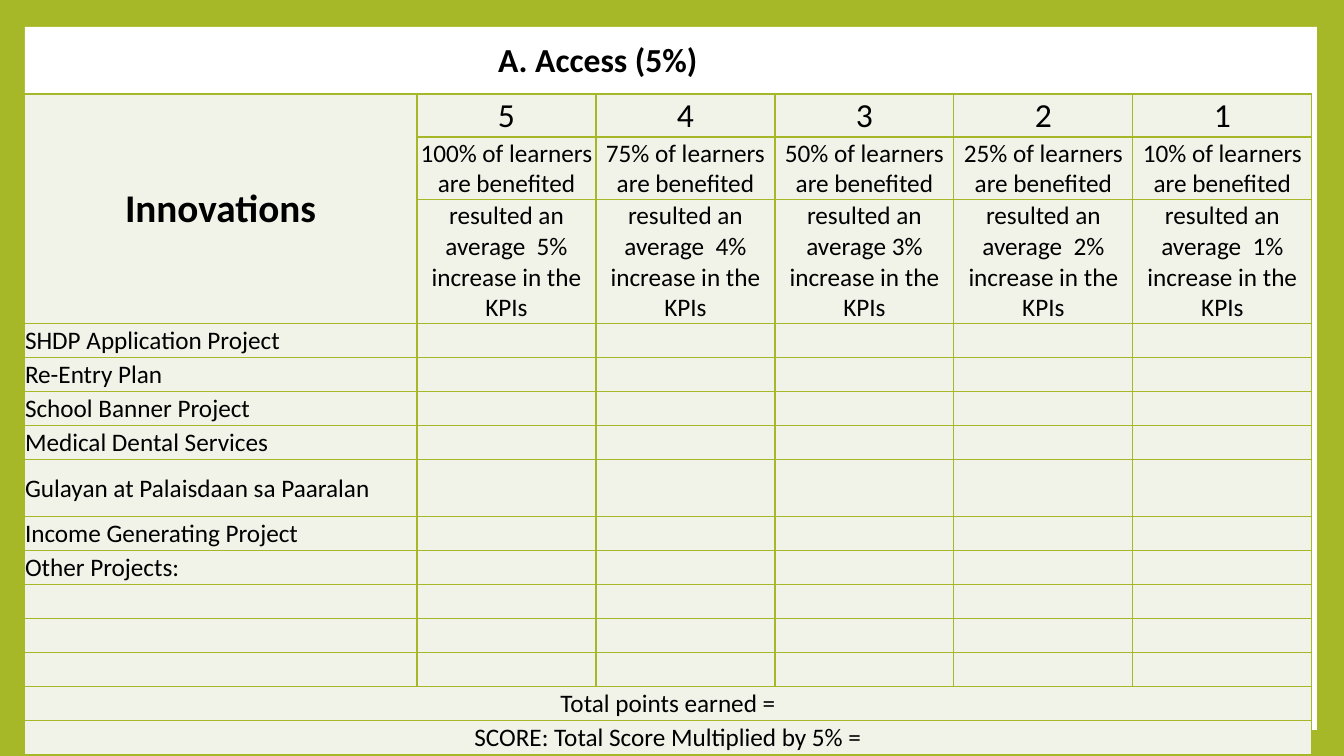
from dataclasses import dataclass

import lxml.etree
import pptx
import pptx.dml.color
import pptx.enum.shapes
import pptx.enum.text
import pptx.oxml.ns
import pptx.util

ALIGN = pptx.enum.text.PP_ALIGN
ANCHOR = pptx.enum.text.MSO_ANCHOR
COLORS = {"green": "A6B727", "white": "FFFFFF", "cell": "F1F3E8", "text": "000000"}
FONT = "Calibri"
EMU_PER_PX = 914400 / 100.8

COLUMN_WIDTHS = [393] + [179] * 5
PROJECTS = [
    "SHDP Application Project",
    "Re-Entry Plan",
    "School Banner Project",
    "Medical Dental Services",
    "Gulayan at Palaisdaan sa Paaralan",
    "Income Generating Project",
    "Other Projects:",
    "",
    "",
    "",
]
TALL_PROJECT = "Gulayan at Palaisdaan sa Paaralan"


@dataclass
class Row:
    height: int
    texts: list[str]
    size: int = 18
    align: ALIGN = ALIGN.CENTER
    full_width: bool = False


ROWS = [
    Row(43, ["Innovations", "5", "4", "3", "2", "1"], size=24),
    Row(62, [""] + [f"{share}% of learners are benefited" for share in (100, 75, 50, 25, 10)]),
    Row(124, [""] + [f"resulted an average{gain}% increase in the KPIs"
                     for gain in ("  5", "  4", " 3", "  2", "  1")]),
    *(Row(57 if project == TALL_PROJECT else 34, [project], align=ALIGN.JUSTIFY)
      for project in PROJECTS),
    Row(34, ["Total points earned ="], full_width=True),
    Row(34, ["SCORE: Total Score Multiplied by 5% ="], full_width=True),
]


def px(length: int) -> pptx.util.Emu:
    return pptx.util.Emu(round(length * EMU_PER_PX))


def set_fill(fill, color: str) -> None:
    fill.solid()
    fill.fore_color.rgb = pptx.dml.color.RGBColor.from_string(COLORS[color])


def style_paragraph(para, size: int, align: ALIGN, bold: bool = False) -> None:
    para.alignment = align
    para.font.name = FONT
    para.font.size = pptx.util.Pt(size)
    para.font.bold = bold
    para.font.color.rgb = pptx.dml.color.RGBColor.from_string(COLORS["text"])


def add_borders(frame) -> None:
    """Draw a one-point green line on every side of every cell."""
    qn = pptx.oxml.ns.qn
    for tc in frame.element.iter(qn("a:tc")):
        properties = tc.get_or_add_tcPr()
        for side in ("lnL", "lnR", "lnT", "lnB"):
            line = lxml.etree.SubElement(properties, qn(f"a:{side}"), w=str(pptx.util.Pt(1)))
            fill = lxml.etree.SubElement(line, qn("a:solidFill"))
            lxml.etree.SubElement(fill, qn("a:srgbClr"), val=COLORS["green"])


def add_title(page) -> None:
    title = page.shapes.title
    title.left, title.top, title.width, title.height = map(px, (488, 40, 398, 39))
    title.text_frame.text = "A. Access (5%)"
    title.text_frame.vertical_anchor = ANCHOR.MIDDLE
    title.text_frame.auto_size = pptx.enum.text.MSO_AUTO_SIZE.NONE
    style_paragraph(title.text_frame.paragraphs[0], 24, ALIGN.LEFT, bold=True)


def add_panel(page) -> None:
    """Lay the white panel behind the title."""
    panel = page.shapes.add_shape(
        pptx.enum.shapes.MSO_SHAPE.RECTANGLE, px(25), px(27), px(1292), px(703))
    panel.shadow.inherit = False
    set_fill(panel.fill, "white")
    panel.line.fill.background()
    page.shapes.title.element.addprevious(panel.element)


def add_score_table(page) -> None:
    frame = page.shapes.add_table(
        len(ROWS), len(COLUMN_WIDTHS), px(24), px(94),
        px(sum(COLUMN_WIDTHS)), px(sum(row.height for row in ROWS)))
    table = frame.table
    table.first_row = table.horz_banding = False
    add_borders(frame)
    for column, width in zip(table.columns, COLUMN_WIDTHS):
        column.width = px(width)
    for row_index, row in enumerate(ROWS):
        table.rows[row_index].height = px(row.height)
        for column_index in range(len(COLUMN_WIDTHS)):
            cell = table.cell(row_index, column_index)
            set_fill(cell.fill, "cell")
            cell.margin_left = cell.margin_right = cell.margin_top = px(1)
            cell.margin_bottom = 0
            cell.vertical_anchor = ANCHOR.MIDDLE
            if column_index < len(row.texts):
                cell.text = row.texts[column_index]
            style_paragraph(cell.text_frame.paragraphs[0], row.size, row.align)
        if row.full_width:
            table.cell(row_index, 0).merge(table.cell(row_index, len(COLUMN_WIDTHS) - 1))
    heading = table.cell(0, 0)
    heading.merge(table.cell(2, 0))
    style_paragraph(heading.text_frame.paragraphs[0], 28, ALIGN.CENTER, bold=True)


def main() -> None:
    deck = pptx.Presentation()
    deck.slide_width, deck.slide_height = px(1344), px(756)
    page = deck.slides.add_slide(deck.slide_layouts.get_by_name("Title Only"))
    set_fill(page.background.fill, "green")
    add_title(page)
    add_panel(page)
    add_score_table(page)
    deck.save("out.pptx")


if __name__ == "__main__":
    main()
